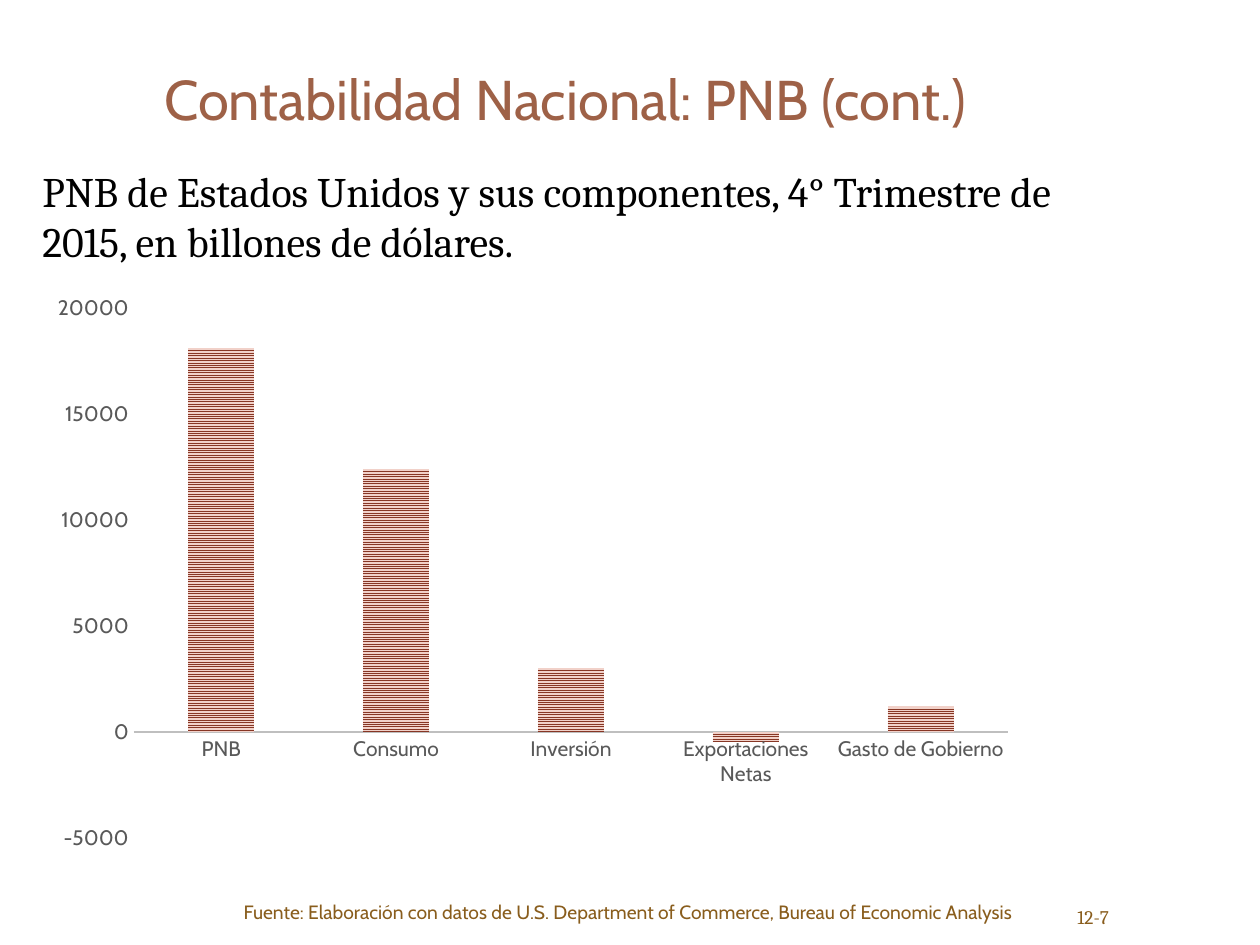
from pptx import Presentation
from pptx.chart.data import CategoryChartData
from pptx.dml.color import RGBColor
from pptx.enum.chart import XL_CHART_TYPE, XL_TICK_MARK
from pptx.enum.dml import MSO_PATTERN
from pptx.enum.text import MSO_ANCHOR, PP_ALIGN
from pptx.util import Pt

PX = 914400 / 126
COLUMN = XL_CHART_TYPE.COLUMN_CLUSTERED
NO_TICK = XL_TICK_MARK.NONE
STRIPES = MSO_PATTERN.NARROW_HORIZONTAL
TOP, MIDDLE, BOTTOM = MSO_ANCHOR.TOP, MSO_ANCHOR.MIDDLE, MSO_ANCHOR.BOTTOM
LEFT, RIGHT = PP_ALIGN.LEFT, PP_ALIGN.RIGHT


def px(*sizes):
    return [round(size * PX) for size in sizes]


def color(hex):
    return RGBColor.from_string(hex)


class Deck:
    sans, serif = "Cabin", "Cambria"
    black, brown, gold = "000000", "9E6147", "895D1D"
    gray, rule = "595959", "BFBFBF"
    dark, pale = "873624", "F1D1C9"

    def __init__(self, width, height):
        self.file = Presentation()
        self.file.slide_width, self.file.slide_height = px(width, height)
        self.slide = self.file.slides.add_slide(self.file.slide_layouts[6])

    def style(self, font, name, size, hex):
        font.name, font.size = name, Pt(size)
        font.color.rgb = color(hex)

    def text(self, box, words, name, size, hex, anchor=TOP, align=LEFT, inset=True):
        frame = self.slide.shapes.add_textbox(*px(*box)).text_frame
        frame.word_wrap = True
        frame.vertical_anchor = anchor
        if not inset:
            frame.margin_left = frame.margin_right = 0
            frame.margin_top = frame.margin_bottom = 0
        para = frame.paragraphs[0]
        para.text = words
        para.alignment = align
        self.style(para.font, name, size, hex)

    def note(self, box, words, name):
        self.text(box, words, name, 11, self.gold, BOTTOM, RIGHT, inset=False)

    def columns(self, box, values):
        data = CategoryChartData()
        data.categories = list(values)
        data.add_series("Series 1", list(values.values()))
        chart = self.slide.shapes.add_chart(COLUMN, *px(*box), data).chart
        chart.has_legend = chart.has_title = False
        self.style(chart.font, self.sans, 10, self.black)

        # Axes
        cats, vals = chart.category_axis, chart.value_axis
        for axis in (cats, vals):
            axis.major_tick_mark = axis.minor_tick_mark = NO_TICK
            axis.has_major_gridlines = False
            self.style(axis.tick_labels.font, self.sans, 12, self.gray)
        cats.format.line.color.rgb = color(self.rule)
        cats.format.line.width = Pt(1.5)
        vals.format.line.fill.background()
        vals.minimum_scale, vals.maximum_scale = -5000, 20000
        vals.major_unit = 5000

        # Striped columns
        plot = chart.plots[0]
        plot.gap_width, plot.overlap = 164, -22
        plot.vary_by_categories = False
        series = plot.series[0]
        series.invert_if_negative = False
        fill = series.format.fill
        fill.patterned()
        fill.pattern = STRIPES
        fill.fore_color.rgb = color(self.dark)
        fill.back_color.rgb = color(self.pale)


def main():
    deck = Deck(1260, 945)

    # Source and page number
    deck.note((136, 883, 877, 40),
              "Fuente: Elaboración con datos de U.S. Department of Commerce, "
              "Bureau of Economic Analysis", deck.sans)
    deck.note((1028, 896, 81, 32), "12-7", deck.serif)

    # Title and lead
    deck.text((152, 19, 1082, 158), "Contabilidad Nacional: PNB (cont.)",
              deck.sans, 32, deck.brown, MIDDLE)
    deck.text((30, 159, 1075, 115),
              "PNB de Estados Unidos y sus componentes, 4° Trimestre de 2015, "
              "en billones de dólares.", deck.serif, 24, deck.black)

    # Chart
    deck.columns((38, 284, 990, 578), {
        "PNB": 18100,
        "Consumo": 12400,
        "Inversión": 3000,
        "Exportaciones Netas": -500,
        "Gasto de Gobierno": 1200,
    })

    deck.file.save("out.pptx")


if __name__ == "__main__":
    main()
